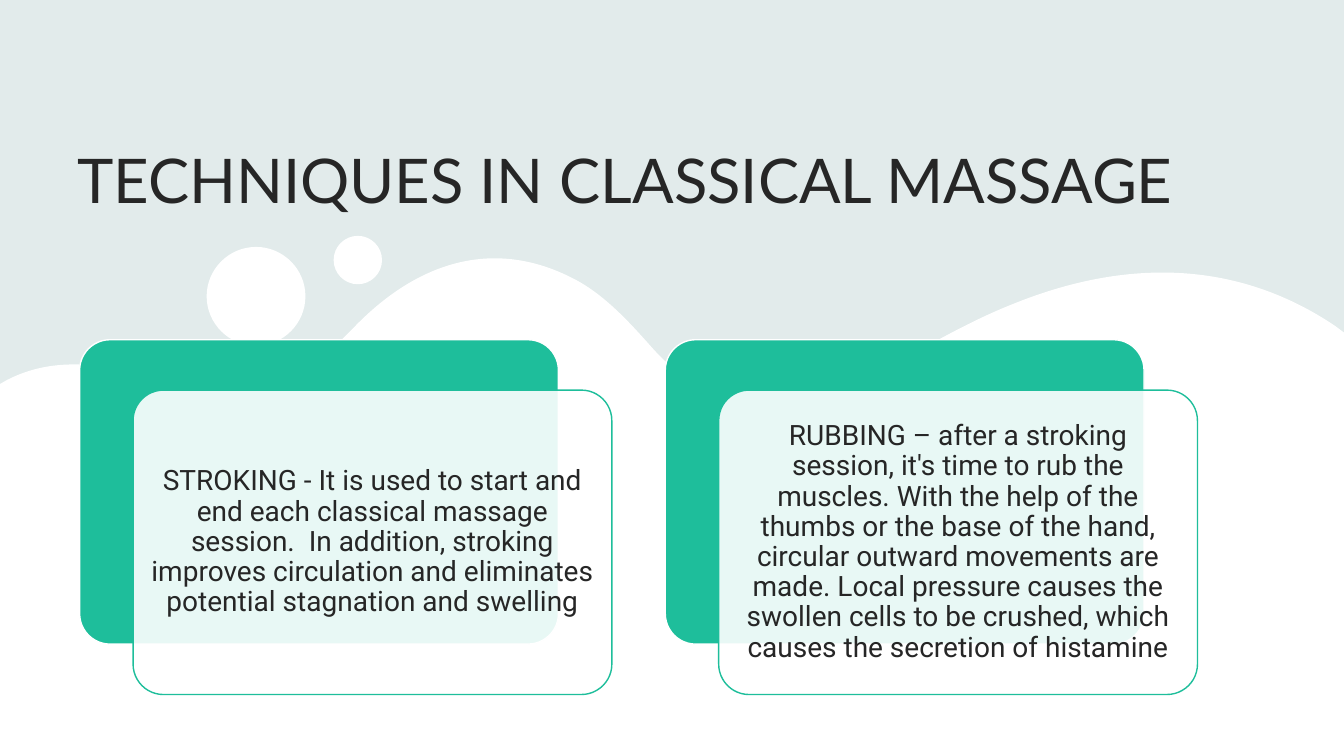
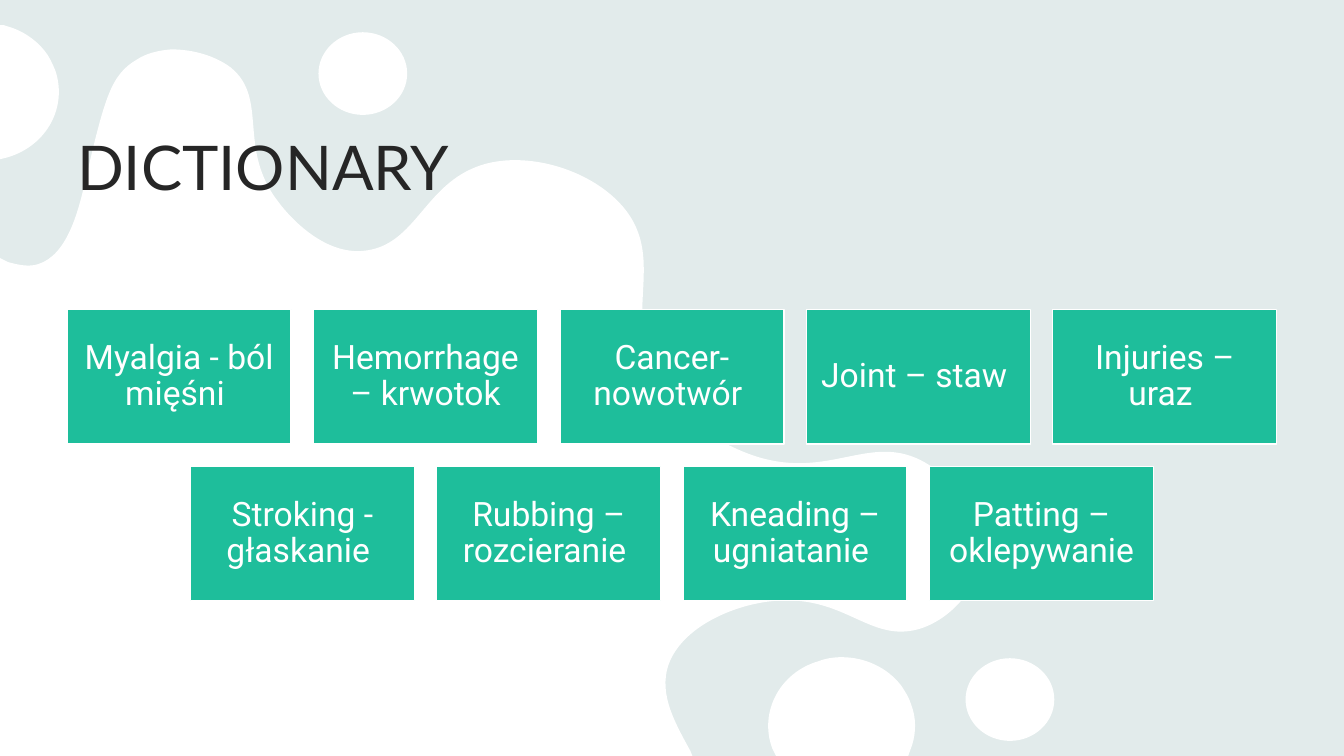
from dataclasses import dataclass

import lxml.etree
import pptx
import pptx.dml.color
import pptx.enum.shapes
import pptx.enum.text
import pptx.oxml.ns
import pptx.util

SLIDE_W, SLIDE_H = 40 / 3, 7.5
MARGIN = SLIDE_W * 0.05
CONTENT_W = SLIDE_W - 2 * MARGIN
COLORS = {
    "background": "E9F3F3",
    "tint": "AEAEAE",
    "white": "FFFFFF",
    "accent": "1EBE9B",
    "text": "262626",
}
TITLE_FONT, BODY_FONT = "Lato", "Roboto"
TITLE_TOP = 0.61
ROUND_HANDLE = 0.55  # control length of a quarter ellipse, as a share of its radius

SHAPES = pptx.enum.shapes.MSO_SHAPE
ANCHOR = pptx.enum.text.MSO_ANCHOR
ALIGN = pptx.enum.text.PP_ALIGN
qn = pptx.oxml.ns.qn

Point = tuple[float, float]
Segment = tuple[float, ...]  # two numbers: line end; six: cubic curve


@dataclass(frozen=True)
class Box:
    left: float
    top: float
    width: float
    height: float

    def emu(self) -> list[int]:
        return [pptx.util.Inches(v) for v in (self.left, self.top, self.width, self.height)]


@dataclass(frozen=True)
class Outline:
    start: Point
    segments: tuple[Segment, ...]


@dataclass(frozen=True)
class TextStyle:
    font: str
    size: int
    color: str


@dataclass(frozen=True)
class Grid:
    """Cells of equal size; gap and height are shares of the cell width."""
    top: float
    columns: int
    gap_share: float
    height_share: float

    def row(self, index: int, count: int) -> list[Box]:
        """Boxes of one row, centred when it is not full."""
        width = CONTENT_W / (self.columns + (self.columns - 1) * self.gap_share)
        gap, height = width * self.gap_share, width * self.height_share
        left = MARGIN + (self.columns - count) * (width + gap) / 2
        top = self.top + index * (height + gap)
        return [Box(left + i * (width + gap), top, width, height) for i in range(count)]


def bubble(x: float, y: float, rx: float, ry: float) -> Outline:
    """Ellipse around (x, y) made of four curves."""
    hx, hy = rx * ROUND_HANDLE, ry * ROUND_HANDLE
    return Outline((x + rx, y), (
        (x + rx, y + hy, x + hx, y + ry, x, y + ry),
        (x - hx, y + ry, x - rx, y + hy, x - rx, y),
        (x - rx, y - hy, x - hx, y - ry, x, y - ry),
        (x + hx, y - ry, x + rx, y - hy, x + rx, y),
    ))


TITLE_STYLE = TextStyle(TITLE_FONT, 44, "text")
CARD_STYLE = TextStyle(BODY_FONT, 20, "text")
TERM_STYLE = TextStyle(BODY_FONT, 24, "white")

WAVE = Outline((SLIDE_W, SLIDE_H), (
    (0, SLIDE_H), (0, 3.81), (0.07, 3.77),
    (0.44, 3.58, 0.82, 3.59, 1.22, 3.67),
    (1.65, 3.76, 2.1, 3.83, 2.54, 3.83),
    (2.95, 3.84, 3.23, 3.53, 3.5, 3.26),
    (4.16, 2.57, 4.92, 2.37, 5.68, 2.76),
    (5.98, 2.91, 6.23, 3.18, 6.46, 3.44),
    (7.07, 4.13, 7.82, 4.15, 8.53, 3.79),
    (9.03, 3.54, 9.51, 3.23, 10.04, 3.02),
    (11.17, 2.56, 12.27, 2.58, 13.24, 3.23),
    (SLIDE_W, 3.3),
))
WAVES = (bubble(3.55, 2.58, 0.24, 0.24), bubble(2.54, 2.94, 0.49, 0.49), WAVE)

SPLASH = Outline((1.7, 0.49), (
    (1.91, 0.49, 2.13, 0.55, 2.29, 0.67),
    (2.67, 0.98, 2.35, 1.47, 2.76, 2),
    (2.81, 2.07, 3.16, 2.52, 3.59, 2.49),
    (4.15, 2.45, 4.2, 1.78, 4.84, 1.62),
    (5.29, 1.51, 5.88, 1.7, 6.18, 2.05),
    (6.65, 2.6, 6.1, 3.2, 6.6, 3.89),
    (6.94, 4.38, 7.53, 4.54, 7.58, 4.55),
    (8.27, 4.73, 8.66, 4.29, 9.18, 4.59),
    (9.28, 4.65, 9.63, 4.86, 9.73, 5.21),
    (9.75, 5.26, 9.76, 5.31, 9.76, 5.36),
    (9.78, 5.74, 9.48, 6.13, 9.12, 6.24),
    (8.63, 6.38, 8.39, 5.91, 7.71, 5.96),
    (7.36, 5.98, 6.84, 6.17, 6.66, 6.53),
    (6.51, 6.84, 6.68, 7.14, 6.85, 7.45),
    (6.87, 7.5), (0, 7.5), (0, 2.56), (0.08, 2.6),
    (0.19, 2.63, 0.29, 2.65, 0.38, 2.62),
    (0.67, 2.53, 0.78, 2.09, 0.85, 1.78),
    (1.04, 0.97, 1.1, 0.74, 1.36, 0.59),
    (1.45, 0.53, 1.57, 0.5, 1.7, 0.49),
))
BOTTOM_DROP = Outline((8.35, 6.52), (
    (8.58, 6.52, 8.8, 6.62, 8.94, 6.8),
    (8.98, 6.86, 9.02, 6.92, 9.04, 6.99),
    (9.09, 7.12, 9.09, 7.26, 9.05, 7.39),
    (9.01, 7.5), (7.7, 7.5), (7.66, 7.42),
    (7.53, 7.06, 7.74, 6.67, 8.12, 6.56),
    (8.2, 6.53, 8.27, 6.52, 8.35, 6.52),
))
LEFT_DROP = Outline((0, 0.25), (
    (0.04, 0.25), (0.07, 0.26),
    (0.22, 0.3, 0.35, 0.39, 0.44, 0.5),
    (0.49, 0.56, 0.52, 0.63, 0.55, 0.7),
    (0.67, 1.06, 0.47, 1.44, 0.08, 1.56),
    (0, 1.58),
))
SPLASHES = (bubble(10.02, 6.94, 0.44, 0.41), BOTTOM_DROP, SPLASH,
            bubble(3.6, 0.73, 0.44, 0.41), LEFT_DROP)

CARD_W, CARD_H = 4.75, 3.02
CARD_LEFT, CARD_TOP, CARD_PITCH = 0.79, 3.37, 5.81
CARD_SHIFT_X, CARD_SHIFT_Y = 0.53, 0.5
TECHNIQUES = (
    "STROKING - It is used to start and end each classical massage session.  In addition, "
    "stroking improves circulation and eliminates potential stagnation and swelling",
    "RUBBING – after a stroking session, it's time to rub the muscles. With the help of the "
    "thumbs or the base of the hand, circular outward movements are made. Local pressure causes "
    "the swollen cells to be crushed, which causes the secretion of histamine",
)

TERM_GRID = Grid(top=3.07, columns=5, gap_share=0.1, height_share=0.6)
TERM_ROWS = (
    ("Myalgia - ból mięśni ", "Hemorrhage – krwotok", "Cancer- nowotwór ",
     "Joint – staw ", "Injuries – uraz "),
    ("Stroking - głaskanie ", "Rubbing – rozcieranie ", "Kneading – ugniatanie ",
     "Patting – oklepywanie"),
)


def rgb(name: str) -> pptx.dml.color.RGBColor:
    return pptx.dml.color.RGBColor.from_string(COLORS[name])


def paint(sp, fill: str, line: str | None = None, opacity: int = 100) -> None:
    sp.shadow.inherit = False
    sp.fill.solid()
    sp.fill.fore_color.rgb = rgb(fill)
    if opacity < 100:
        clr = sp.element.spPr.find(qn("a:solidFill"))[0]
        lxml.etree.SubElement(clr, qn("a:alpha"), val=str(opacity * 1000))
    if line is None:
        sp.line.fill.background()
    else:
        sp.line.color.rgb = rgb(line)
        sp.line.width = pptx.util.Pt(1)


def add_box(s, kind, box: Box, fill: str, line: str | None = None, opacity: int = 100):
    sp = s.shapes.add_shape(kind, *box.emu())
    paint(sp, fill, line, opacity)
    return sp


def add_run(p, text: str, style: TextStyle) -> None:
    r = p.add_run()
    r.text = text
    r.font.name = style.font
    r.font.size = pptx.util.Pt(style.size)
    r.font.color.rgb = rgb(style.color)


def write_centred(sp, text: str, style: TextStyle, inset: float) -> None:
    tf = sp.text_frame
    tf.word_wrap = True
    tf.vertical_anchor = ANCHOR.MIDDLE
    tf.margin_left = tf.margin_right = pptx.util.Inches(inset)
    tf.margin_top = tf.margin_bottom = pptx.util.Inches(inset)
    p = tf.paragraphs[0]
    p.alignment = ALIGN.CENTER
    p.line_spacing = 0.9
    add_run(p, text, style)


def emu_point(x: float, y: float) -> tuple[int, int]:
    return pptx.util.Inches(x), pptx.util.Inches(y)


def add_outlines(s, outlines: tuple[Outline, ...]) -> None:
    """Draw all outlines as one freeform, then bend its curved segments."""
    fb = s.shapes.build_freeform(*emu_point(*outlines[0].start))
    for i, outline in enumerate(outlines):
        if i:
            fb.move_to(*emu_point(*outline.start))
        fb.add_line_segments([emu_point(*seg[-2:]) for seg in outline.segments], close=True)
    sp = fb.convert_to_shape()
    paint(sp, "white")
    segments = [seg for outline in outlines for seg in outline.segments]
    for line, seg in zip(list(sp.element.iter(qn("a:lnTo"))), segments):
        if len(seg) == 2:
            continue
        curve = lxml.etree.Element(qn("a:cubicBezTo"))
        for j in range(0, 6, 2):
            x, y = emu_point(seg[j], seg[j + 1])
            lxml.etree.SubElement(curve, qn("a:pt"), x=str(x - sp.left), y=str(y - sp.top))
        line.getparent().replace(line, curve)


def add_slide(prs, title: str, title_height: float, outlines: tuple[Outline, ...]):
    """Start a slide with the shared backdrop, white forms and title."""
    s = prs.slides.add_slide(prs.slide_layouts[6])
    s.background.fill.solid()
    s.background.fill.fore_color.rgb = rgb("background")
    add_box(s, SHAPES.RECTANGLE, Box(0, 0, SLIDE_W, SLIDE_H), "tint", opacity=10)
    add_outlines(s, outlines)
    box = Box(MARGIN, TITLE_TOP, CONTENT_W, title_height)
    tf = s.shapes.add_textbox(*box.emu()).text_frame
    tf.word_wrap = True
    tf.vertical_anchor = ANCHOR.BOTTOM
    add_run(tf.paragraphs[0], title, TITLE_STYLE)
    return s


def add_card(s, left: float, text: str) -> None:
    """Draw a solid card and a shifted translucent one that holds the text."""
    back = Box(left, CARD_TOP, CARD_W, CARD_H)
    front = Box(left + CARD_SHIFT_X, CARD_TOP + CARD_SHIFT_Y, CARD_W, CARD_H)
    for box, fill, line, opacity in ((back, "accent", "white", 100),
                                     (front, "white", "accent", 90)):
        sp = add_box(s, SHAPES.ROUNDED_RECTANGLE, box, fill, line, opacity)
        sp.adjustments[0] = 0.1
    write_centred(sp, text, CARD_STYLE, 0.08)


def build_techniques(prs) -> None:
    s = add_slide(prs, "TECHNIQUES IN CLASSICAL MASSAGE", 1.58, WAVES)
    for i, text in enumerate(TECHNIQUES):
        add_card(s, CARD_LEFT + i * CARD_PITCH, text)


def build_dictionary(prs) -> None:
    s = add_slide(prs, "DICTIONARY", 1.45, SPLASHES)
    for i, terms in enumerate(TERM_ROWS):
        for box, term in zip(TERM_GRID.row(i, len(terms)), terms):
            sp = add_box(s, SHAPES.RECTANGLE, box, "accent", "white")
            write_centred(sp, term, TERM_STYLE, 0.1)


def main() -> None:
    prs = pptx.Presentation()
    prs.slide_width = pptx.util.Inches(SLIDE_W)
    prs.slide_height = pptx.util.Inches(SLIDE_H)
    build_techniques(prs)
    build_dictionary(prs)
    prs.save("out.pptx")


if __name__ == "__main__":
    main()
